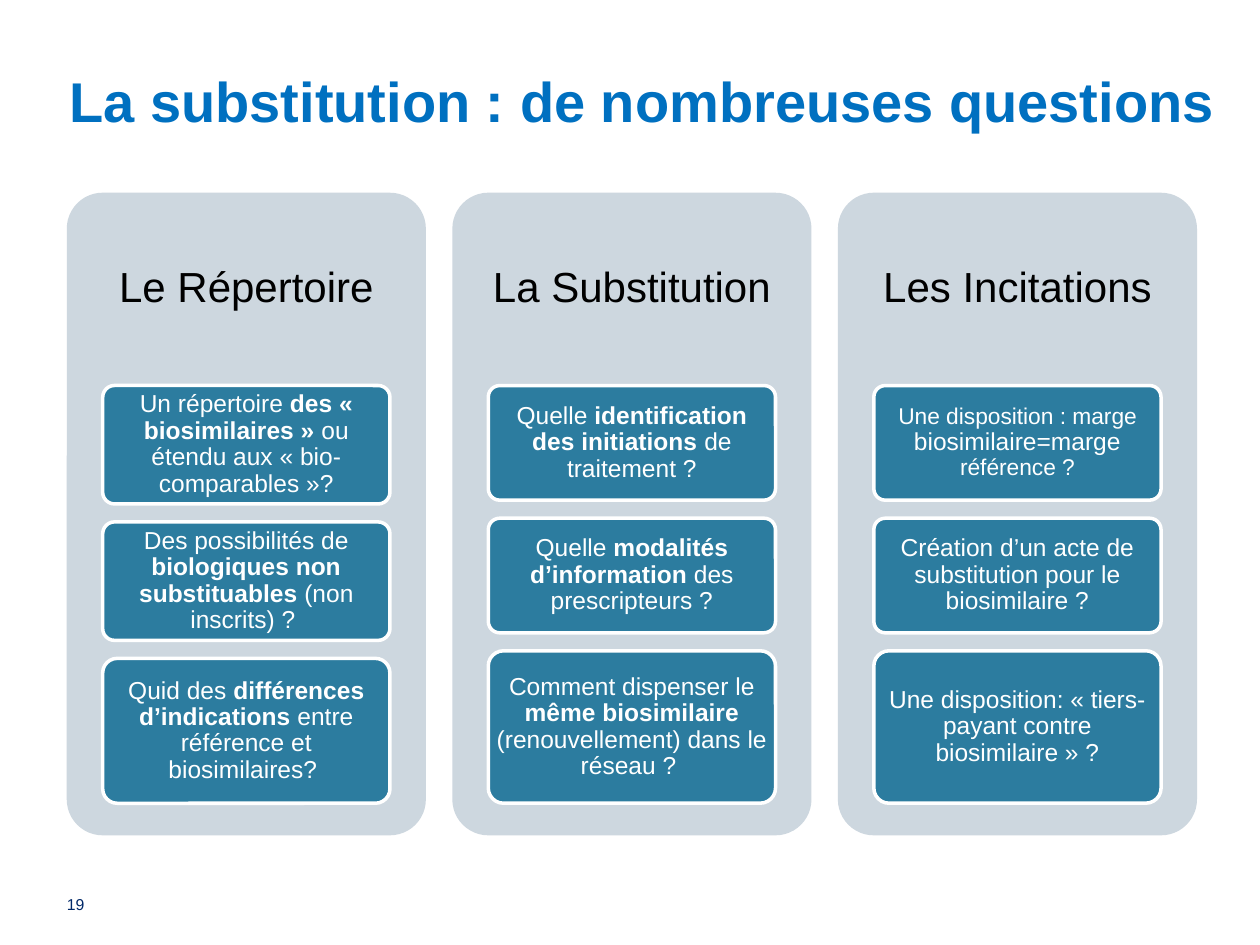
from pptx import Presentation
from pptx.dml.color import RGBColor
from pptx.enum.shapes import MSO_SHAPE as Shape
from pptx.enum.text import MSO_ANCHOR as Anchor, PP_ALIGN as Align
from pptx.util import Inches, Pt

FONT = "Arial"
TITLE_BLUE = RGBColor(0x00, 0x70, 0xC0)
NUMBER_BLUE = RGBColor(0x00, 0x28, 0x68)
PANEL_GREY = RGBColor(0xCD, 0xD7, 0xDF)
CARD_BLUE = RGBColor(0x2C, 0x7C, 0x9F)
WHITE = RGBColor(0xFF, 0xFF, 0xFF)
BLACK = RGBColor(0x00, 0x00, 0x00)

BOLD = {"bold": True}
SMALL = {"size": Pt(13)}
PLAIN = {}

COLUMNS = [
    ("Le Répertoire", (0.94, 0.94, 1.15), [
        [("Un répertoire ", PLAIN), ("des « biosimilaires » ", BOLD),
         ("ou étendu aux « bio-comparables »?", PLAIN)],
        [("Des possibilités de ", PLAIN), ("biologiques non substituables ", BOLD),
         ("(non inscrits) ? ", PLAIN)],
        [("Quid des ", PLAIN), ("différences d’indications ", BOLD),
         ("entre référence et biosimilaires? ", PLAIN)],
    ]),
    ("La Substitution", (0.91, 0.91, 1.21), [
        [("Quelle ", PLAIN), ("identification des initiations ", BOLD),
         ("de traitement ?", PLAIN)],
        [("Quelle ", PLAIN), ("modalités d’information ", BOLD),
         ("des prescripteurs ?", PLAIN)],
        [("Comment dispenser le ", PLAIN), ("même biosimilaire ", BOLD),
         ("(renouvellement) dans le réseau ? ", PLAIN)],
    ]),
    ("Les Incitations", (0.91, 0.91, 1.21), [
        [("Une disposition : marge ", SMALL), ("biosimilaire=marge", PLAIN),
         (" référence ?", SMALL)],
        [("Création d’un acte de substitution pour le biosimilaire ?", PLAIN)],
        [("Une disposition: « tiers-payant contre biosimilaire » ?", PLAIN)],
    ]),
]


def write_text(shape, runs, size, color, align=Align.CENTER, anchor=Anchor.MIDDLE,
               margins=(0, 0), bold=False, line_spacing=None):
    frame = shape.text_frame
    frame.word_wrap = True
    frame.vertical_anchor = anchor
    frame.margin_left = frame.margin_right = Inches(margins[0])
    frame.margin_top = frame.margin_bottom = Inches(margins[1])
    paragraph = frame.paragraphs[0]
    paragraph.alignment = align
    paragraph.line_spacing = line_spacing
    font = paragraph.font
    font.name, font.size, font.bold = FONT, Pt(size), bold
    font.color.rgb = color
    for text, style in runs:
        run = paragraph.add_run()
        run.text = text
        for name, value in style.items():
            setattr(run.font, name, value)


def add_rounded_box(slide, left, top, width, height, fill):
    shape = slide.shapes.add_shape(Shape.ROUNDED_RECTANGLE, Inches(left), Inches(top),
                                   Inches(width), Inches(height))
    shape.adjustments[0] = 0.1
    shape.shadow.inherit = False
    shape.fill.solid()
    shape.fill.fore_color.rgb = fill
    shape.line.fill.background()
    return shape


def add_title(slide, left, top, width, height):
    title = slide.shapes.title
    title.left, title.top = Inches(left), Inches(top)
    title.width, title.height = Inches(width), Inches(height)
    write_text(title, [("La substitution : de nombreuses questions", PLAIN)], 32,
               TITLE_BLUE, anchor=Anchor.BOTTOM, margins=(0.1, 0.05), bold=True)


def add_slide_number(slide, left, top, width, height):
    box = slide.shapes.add_textbox(Inches(left), Inches(top), Inches(width), Inches(height))
    write_text(box, [("19", PLAIN)], 9, NUMBER_BLUE, Align.LEFT, Anchor.TOP)


def add_card(slide, left, top, width, height, runs):
    card = add_rounded_box(slide, left, top, width, height, CARD_BLUE)
    card.line.color.rgb = WHITE
    card.line.width = Pt(2)
    write_text(card, runs, 14, WHITE, margins=(0.01, 0), line_spacing=0.9)


def add_column(slide, left, top, width, height, heading, card_heights, questions):
    add_rounded_box(slide, left, top, width, height, PANEL_GREY)
    heading_height = 0.3 * height
    box = slide.shapes.add_textbox(Inches(left), Inches(top), Inches(width),
                                   Inches(heading_height))
    write_text(box, [(heading, PLAIN)], 24, BLACK, margins=(0.1, 0.1), line_spacing=0.9)

    card_width = 0.8 * width
    card_left = left + (width - card_width) / 2
    card_top = top + heading_height
    stack_height = 0.65 * height
    gap = (stack_height - sum(card_heights)) / (len(card_heights) - 1)
    for card_height, runs in zip(card_heights, questions):
        add_card(slide, card_left, card_top, card_width, card_height, runs)
        card_top += card_height + gap


def add_columns(slide, left, top, width, height, gap=0.21):
    column_width = (width - gap * (len(COLUMNS) - 1)) / len(COLUMNS)
    for index, column in enumerate(COLUMNS):
        add_column(slide, left + index * (column_width + gap), top, column_width,
                   height, *column)


def main():
    presentation = Presentation()
    presentation.slide_width = Inches(10)
    presentation.slide_height = Inches(7.5)
    slide = presentation.slides.add_slide(presentation.slide_layouts[5])
    add_title(slide, 0.35, 0.21, 9.5, 0.9)
    add_slide_number(slide, 0.53, 7.1, 0.25, 0.15)
    add_columns(slide, 0.53, 1.53, 8.97, 5.1)
    presentation.save("out.pptx")


if __name__ == "__main__":
    main()
